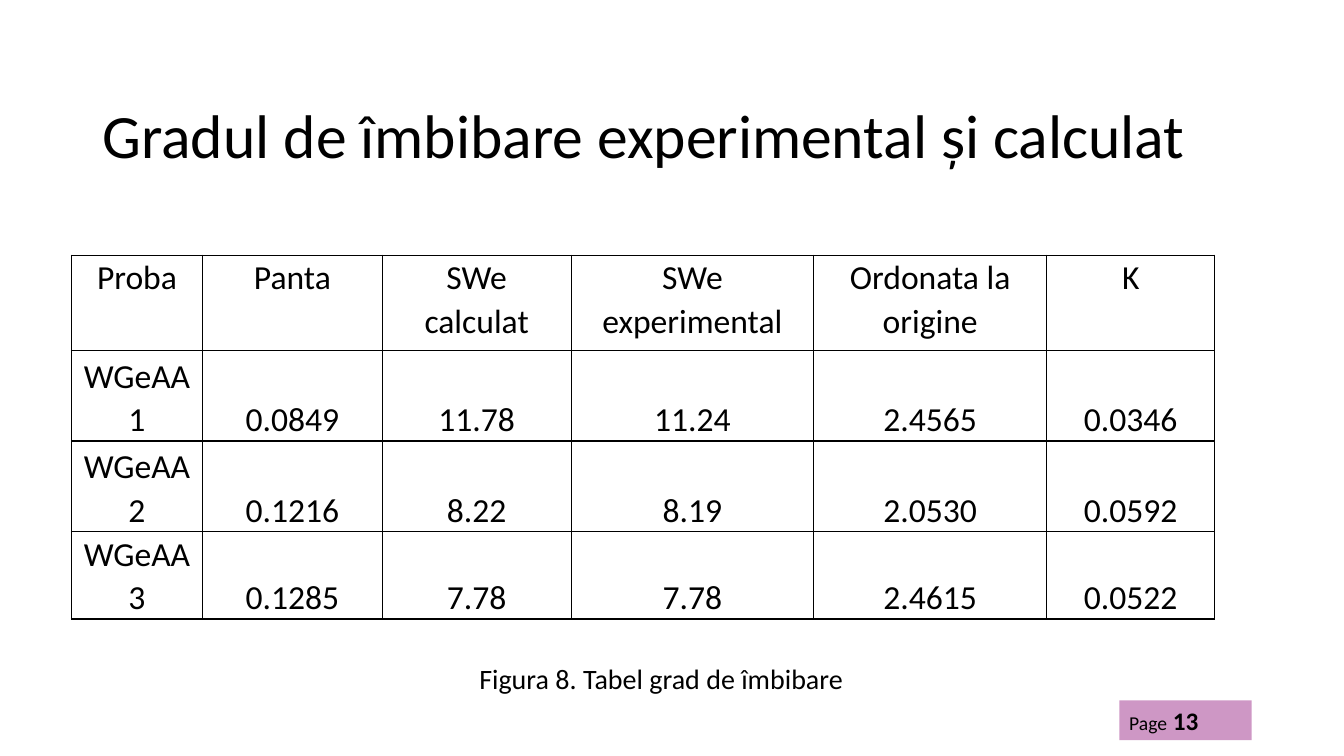
from lxml import etree
from pptx import Presentation
from pptx import util as u
from pptx.dml import color
from pptx.enum import shapes, text
from pptx.oxml import ns

PX = 9525
COLORS = {"ink": "000000", "paper": "FFFFFF", "badge": "9F318D"}
COLUMN_WIDTHS = [125, 171, 180, 231, 222, 160]
ROW_HEIGHTS = [91, 86, 86, 68]
ROWS = [
    ["Proba", "Panta", "SWe\ncalculat", "SWe experimental", "Ordonata la origine", "K"],
    ["WGeAA1", "0.0849", "11.78", "11.24", "2.4565", "0.0346"],
    ["WGeAA2", "0.1216", "8.22", "8.19", "2.0530", "0.0592"],
    ["WGeAA3", "0.1285", "7.78", "7.78", "2.4615", "0.0522"],
]


def rgb(name):
    return color.RGBColor.from_string(COLORS[name])


def write(frame, runs, size=24, align=text.PP_ALIGN.LEFT, spacing=None):
    """Fill a frame with a string or with (words, size, bold) runs."""
    if isinstance(runs, str):
        lines = [[(line, size, False)] for line in runs.split("\n")]
    else:
        lines = [runs]
    for index, line in enumerate(lines):
        paragraph = frame.add_paragraph() if index else frame.paragraphs[0]
        paragraph.alignment = align
        paragraph.line_spacing = spacing
        for words, points, bold in line:
            run = paragraph.add_run()
            run.text = words
            run.font.name = "Calibri"
            run.font.size = u.Pt(points)
            run.font.bold = bold
            run.font.color.rgb = rgb("ink")


class SlideBuilder:
    def __init__(self, presentation):
        self.slide = presentation.slides.add_slide(presentation.slide_layouts[5])

    def title(self, words, left, top, width, height):
        shape = self.slide.shapes.title
        shape.left, shape.top, shape.width, shape.height = (
            value * PX for value in (left, top, width, height))
        shape.text_frame.vertical_anchor = text.MSO_ANCHOR.MIDDLE
        write(shape.text_frame, words, size=44, spacing=0.9)

    def badge(self, runs, *box):
        shape = self.slide.shapes.add_shape(
            shapes.MSO_SHAPE.RECTANGLE, *(value * PX for value in box))
        shape.shadow.inherit = False
        shape.line.fill.background()
        shape.fill.solid()
        shape.fill.fore_color.rgb = rgb("badge")
        tint = shape.fill._xPr.find(".//" + ns.qn("a:srgbClr"))
        etree.SubElement(tint, ns.qn("a:alpha"), val="50000")
        shape.text_frame.vertical_anchor = text.MSO_ANCHOR.TOP
        write(shape.text_frame, runs)

    def caption(self, words, *box):
        shape = self.slide.shapes.add_textbox(*(value * PX for value in box))
        shape.text_frame.word_wrap = True
        shape.text_frame.auto_size = text.MSO_AUTO_SIZE.SHAPE_TO_FIT_TEXT
        write(shape.text_frame, words, size=20)

    def table(self, rows, left, top, widths, heights):
        table = self.slide.shapes.add_table(
            len(rows), len(widths), left * PX, top * PX,
            sum(widths) * PX, sum(heights) * PX).table
        table.first_row = table.horz_banding = False
        for column, width in zip(table.columns, widths):
            column.width = width * PX
        for index, (values, height) in enumerate(zip(rows, heights)):
            table.rows[index].height = height * PX
            anchor = text.MSO_ANCHOR.BOTTOM if index else text.MSO_ANCHOR.TOP
            for cell, value in zip(table.rows[index].cells, values):
                self.cell(cell, value, anchor)

    def cell(self, cell, value, anchor):
        cell.margin_left = cell.margin_right = 7 * PX
        cell.margin_top = cell.margin_bottom = 0
        cell.vertical_anchor = anchor
        write(cell.text_frame, value, align=text.PP_ALIGN.CENTER, spacing=1.07)
        properties = cell._tc.get_or_add_tcPr()
        for side in ("lnL", "lnR", "lnT", "lnB"):
            border = etree.SubElement(properties, ns.qn("a:" + side), w=str(u.Pt(1)))
            fill = etree.SubElement(border, ns.qn("a:solidFill"))
            etree.SubElement(fill, ns.qn("a:srgbClr"), val=COLORS["ink"])
        cell.fill.solid()
        cell.fill.fore_color.rgb = rgb("paper")


def main():
    presentation = Presentation()
    presentation.slide_width = 1280 * PX
    presentation.slide_height = 720 * PX
    builder = SlideBuilder(presentation)
    builder.title("Gradul de îmbibare experimental și calculat", 88, 87, 1104, 90)
    builder.badge([("Page", 14, False), (" 13", 18, True)], 1066, 667, 126, 38)
    builder.table(ROWS, 68, 243, COLUMN_WIDTHS, ROW_HEIGHTS)
    builder.caption("Figura 8. Tabel grad de îmbibare", 447, 625, 369, 42)
    presentation.save("out.pptx")


if __name__ == "__main__":
    main()
